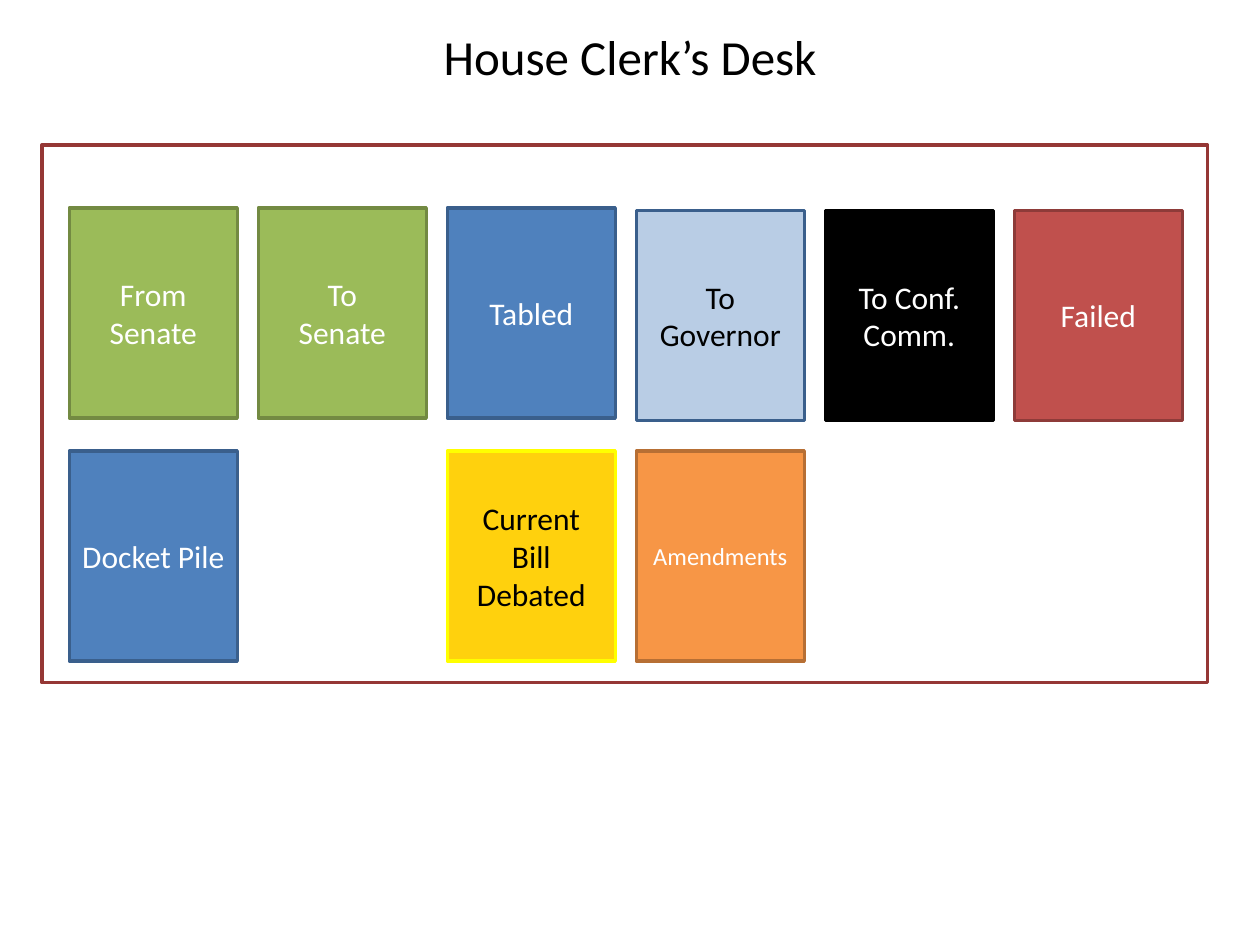
from pptx import Presentation
from pptx.dml.color import RGBColor
from pptx.enum import shapes, text
from pptx.util import Pt

COLORS = {
    "white": "FFFFFF", "black": "000000", "maroon": "953735",
    "green": "9BBB59", "dark green": "738A42",
    "blue": "4F81BD", "dark blue": "3A5F8C", "pale blue": "B9CDE5",
    "red": "C0504D", "dark red": "8E3B39",
    "orange": "F79646", "dark orange": "B76F34",
    "gold": "FFD10D", "yellow": "FFFF00",
}
FONT = "Calibri"
TITLE = "House Clerk’s Desk"

# column, top, label, fill, line, font colour, size
PILES = [
    (0, 118.8, "From Senate", "green", "dark green", "white", 18),
    (1, 118.8, "To\nSenate", "green", "dark green", "white", 18),
    (2, 118.8, "Tabled", "blue", "dark blue", "white", 18),
    (3, 120.2, "To Governor", "pale blue", "dark blue", "black", 18),
    (4, 120.2, "To Conf. Comm.", "black", "black", "white", 18),
    (5, 120.2, "Failed", "red", "dark red", "white", 18),
    (0, 257.8, "Docket Pile", "blue", "dark blue", "white", 18),
    (2, 257.8, "Current Bill Debated", "gold", "yellow", "black", 18),
    (3, 257.8, "Amendments", "orange", "dark orange", "white", 14),
]
LEFT, PITCH, WIDTH, HEIGHT = 39.6, 108, 96, 120


def rgb(name):
    return RGBColor.from_string(COLORS[name])


def write(sp, label, size, color):
    tf = sp.text_frame
    tf.text = label
    tf.word_wrap = True
    tf.vertical_anchor = text.MSO_ANCHOR.MIDDLE
    for p in tf.paragraphs:
        p.alignment = text.PP_ALIGN.CENTER
        for r in p.runs:
            r.font.name = FONT
            r.font.size = Pt(size)
            r.font.color.rgb = rgb(color)


def add_box(slide, left, top, width, height, fill, line):
    sp = slide.shapes.add_shape(shapes.MSO_SHAPE.RECTANGLE,
                                Pt(left), Pt(top), Pt(width), Pt(height))
    sp.shadow.inherit = False
    sp.fill.solid()
    sp.fill.fore_color.rgb = rgb(fill)
    sp.line.color.rgb = rgb(line)
    sp.line.width = Pt(2)
    return sp


def main():
    """Build the slide of bill piles on the clerk's desk."""
    prs = Presentation()
    prs.slide_width, prs.slide_height = Pt(720), Pt(540)
    slide = prs.slides.add_slide(prs.slide_layouts[5])

    title = slide.shapes.title
    title.left, title.top, title.width, title.height = Pt(0), Pt(11.5), Pt(720), Pt(41)
    write(title, TITLE, 28, "black")

    add_box(slide, 24, 82.8, 666, 307.4, "white", "maroon")
    for column, top, label, fill, line, color, size in PILES:
        sp = add_box(slide, LEFT + column * PITCH, top, WIDTH, HEIGHT, fill, line)
        write(sp, label, size, color)

    prs.save("out.pptx")


if __name__ == "__main__":
    main()
